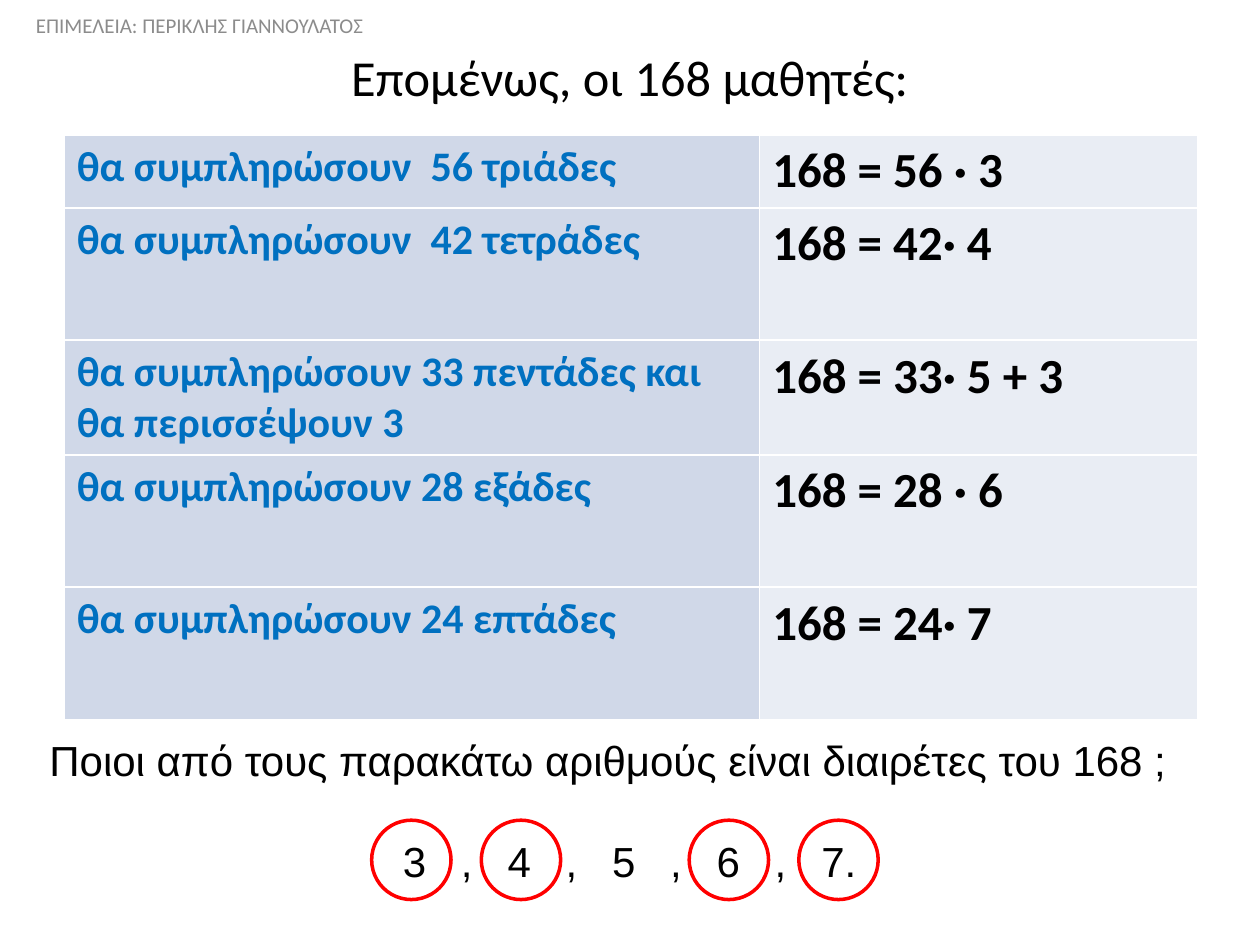
"""Build the slide on the divisors of 168."""
import pptx
import pptx.util
import pptx.dml.color
import pptx.enum.shapes
import pptx.enum.text
import pptx.oxml

INK = {"text": "000000", "note": "8C8C8C", "claim": "0070C0", "left": "D0D8E8",
       "right": "E9EDF4", "edge": "FFFFFF", "ring": "FF0000"}
NOTE = "ΕΠΙΜΕΛΕΙΑ: ΠΕΡΙΚΛΗΣ ΓΙΑΝΝΟΥΛΑΤΟΣ"
TITLE = "Επομένως, οι 168 μαθητές:"
ROWS = [
    ("θα συμπληρώσουν  56 τριάδες", "168 = 56 · 3", 0.58),
    ("θα συμπληρώσουν  42 τετράδες", "168 = 42· 4", 1.05),
    ("θα συμπληρώσουν 33 πεντάδες και θα περισσέψουν 3", "168 = 33· 5 + 3", 0.91),
    ("θα συμπληρώσουν 28 εξάδες", "168 = 28 · 6", 1.05),
    ("θα συμπληρώσουν 24 επτάδες", "168 = 24· 7", 1.05),
]
COLS = [(5.52, 24, "claim", "left"), (3.48, 28, "text", "right")]
ASK = "Ποιοι από τους παρακάτω αριθμούς είναι διαιρέτες του 168 ;"
NUMS = ["3", "4", "5", "6", "7."]
RINGS = [2.95, 3.82, 5.47, 6.34]
STEP, COMMA = 0.83, 0.46

Inch, Pt = pptx.util.Inches, pptx.util.Pt
Align = pptx.enum.text.PP_ALIGN
Anchor = pptx.enum.text.MSO_ANCHOR
SPACE = 'xmlns:a="http://schemas.openxmlformats.org/drawingml/2006/main"'


def tint(name):
    return pptx.dml.color.RGBColor.from_string(INK[name])


def style(para, size, ink, face="Calibri", bold=False):
    font = para.font
    font.size, font.name, font.bold = Pt(size), face, bold
    font.color.rgb = tint(ink)


def label(slide, box, text, size, ink="text", face="Calibri", align=Align.CENTER):
    frame = slide.shapes.add_textbox(*map(Inch, box)).text_frame
    frame.word_wrap = True
    frame.vertical_anchor = Anchor.MIDDLE
    para = frame.paragraphs[0]
    para.text, para.alignment = text, align
    style(para, size, ink, face)
    return para


def edge(cell, sides):
    props = cell._tc.get_or_add_tcPr()
    for spot, side in enumerate(sides):
        props.insert(spot, pptx.oxml.parse_xml(
            f'<a:ln{side} {SPACE} w="12700"><a:solidFill>'
            f'<a:srgbClr val="{INK["edge"]}"/></a:solidFill></a:ln{side}>'))


def grid(slide):
    wide, high = sum(c[0] for c in COLS), sum(r[2] for r in ROWS)
    table = slide.shapes.add_table(len(ROWS), len(COLS), Inch(0.51), Inch(1.07),
                                   Inch(wide), Inch(high)).table
    table.first_row = table.horz_banding = False
    bare = {(0, 0): "", (0, 1): "RTB", (1, 0): "LRB"}
    for x, (width, size, ink, fill) in enumerate(COLS):
        table.columns[x].width = Inch(width)
        for y, row in enumerate(ROWS):
            table.rows[y].height = Inch(row[2])
            cell = table.cell(y, x)
            cell.text = row[x]
            style(cell.text_frame.paragraphs[0], size, ink, bold=True)
            cell.fill.solid()
            cell.fill.fore_color.rgb = tint(fill)
            edge(cell, bare.get((y, x), "LRTB"))


def count(slide):
    para = label(slide, (3.1, 6.58, 4, 0.5), "\t,\t".join(NUMS), 24,
                 face="Arial", align=Align.LEFT)
    stops = [i * STEP + gap for i in range(len(NUMS)) for gap in (0, COMMA)][1:-1]
    tabs = "".join(f'<a:tab pos="{Inch(s)}" algn="l"/>' for s in stops)
    props = para._p.get_or_add_pPr()
    props.insert(0, pptx.oxml.parse_xml(f"<a:tabLst {SPACE}>{tabs}</a:tabLst>"))


def ring(slide, left):
    kind = pptx.enum.shapes.MSO_SHAPE.FLOWCHART_CONNECTOR
    shape = slide.shapes.add_shape(kind, *map(Inch, (left, 6.51, 0.63, 0.63)))
    shape.shadow.inherit = False
    shape.fill.background()
    shape.line.color.rgb = tint("ring")
    shape.line.width = Pt(2)


def main():
    deck = pptx.Presentation()
    deck.slide_width, deck.slide_height = Inch(10), Inch(7.5)
    slide = deck.slides.add_slide(deck.slide_layouts[6])
    label(slide, (0.5, 0.3, 9, 0.61), TITLE, 28.8)
    grid(slide)
    label(slide, (0.2, 5.78, 9.25, 0.5), ASK, 24, face="Arial")
    count(slide)
    for left in RINGS:
        ring(slide, left)
    label(slide, (0, 0, 3.17, 0.4), NOTE, 12, "note")
    deck.save("out.pptx")


if __name__ == "__main__":
    main()
